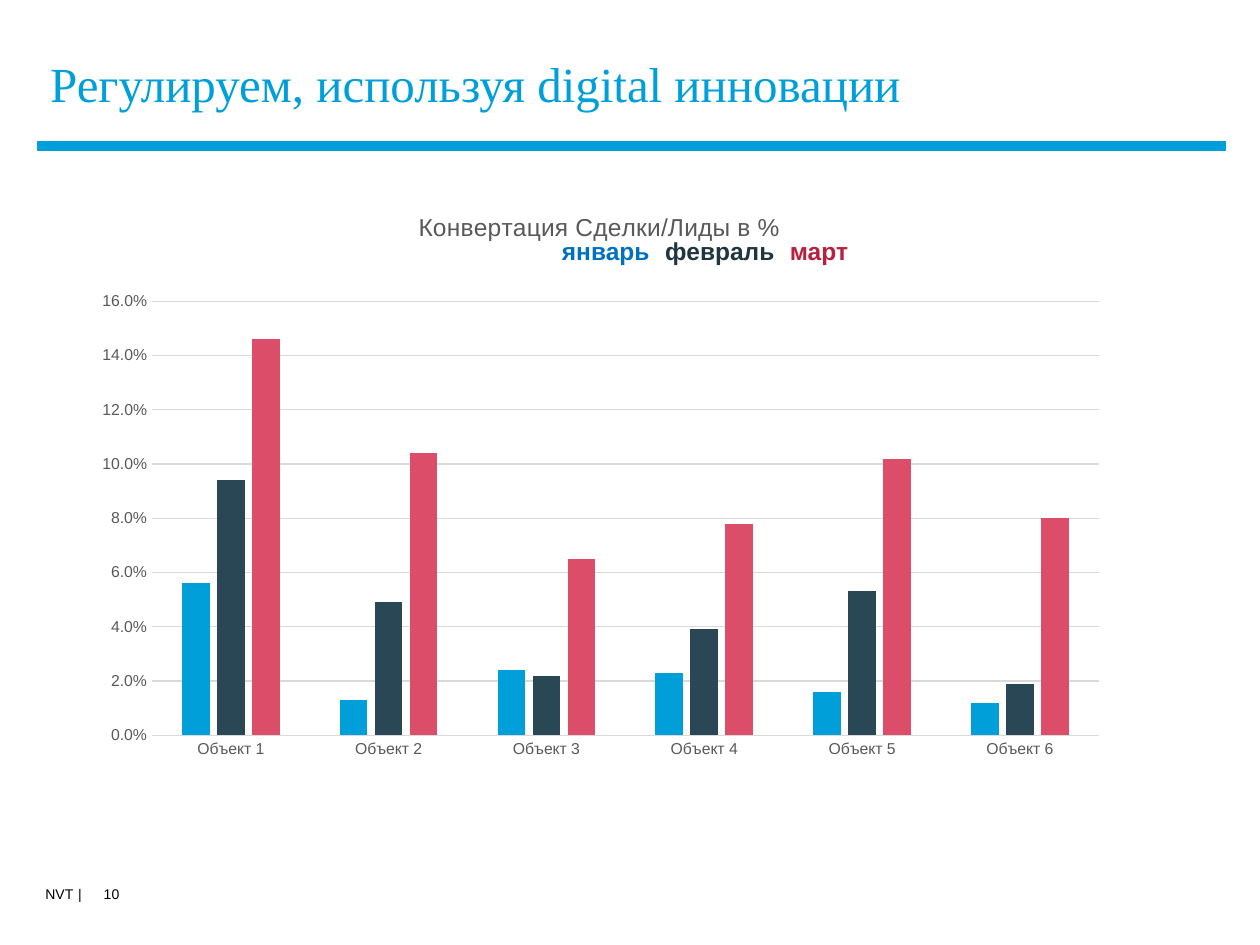
from lxml import etree
from pptx import Presentation, util as u
from pptx.chart.data import CategoryChartData
from pptx.dml.color import RGBColor
from pptx.enum import chart as ch, shapes, text
from pptx.oxml import parse_xml
from pptx.oxml.ns import nsdecls, qn

WIDE, HIGH = u.Inches(10), u.Inches(7.5)
COLS, ROWS = 200, 150  # square grid cells over the whole slide
HUES = {
    "blue": "009FDA", "slate": "294754", "rose": "DB4D69",
    "jan": "0070C0", "feb": "1F3540", "mar": "B7203F",
    "grey": "595959", "rule": "D9D9D9", "black": "000000",
}
MONTHS = [
    ("январь", "blue", "jan", (0.056, 0.013, 0.024, 0.023, 0.016, 0.012)),
    ("февраль", "slate", "feb", (0.094, 0.049, 0.022, 0.039, 0.053, 0.019)),
    ("март", "rose", "mar", (0.146, 0.104, 0.065, 0.078, 0.102, 0.08)),
]


def hue(name):
    return RGBColor.from_string(HUES[name])


def col(n):
    return round(WIDE * n / COLS)


def row(n):
    return round(HIGH * n / ROWS)


def place(x, y, w, h):
    return col(x), row(y), col(w), row(h)


def style(font, size, color, bold=False, face="Arial"):
    font.size, font.bold, font.name = u.Pt(size), bold, face
    font.color.rgb = hue(color)


def add_text(slide, box, runs, size, face="Arial", bold=False, pad=(0, 0, 0, 0),
             stops=(), align=text.PP_ALIGN.LEFT, anchor=text.MSO_ANCHOR.TOP, lead=None):
    """Add one paragraph; runs are (words, colour), pad and stops are in columns."""
    frame = slide.shapes.add_textbox(*place(*box)).text_frame
    frame.word_wrap = True
    frame.vertical_anchor = anchor
    (frame.margin_left, frame.margin_top,
     frame.margin_right, frame.margin_bottom) = map(col, pad)
    para = frame.paragraphs[0]
    para.alignment = align
    if lead:
        para.line_spacing = lead
    if stops:
        tabs = etree.SubElement(para._p.get_or_add_pPr(), qn("a:tabLst"))
        for stop in stops:
            etree.SubElement(tabs, qn("a:tab"), pos=str(col(stop)), algn="l")
    for words, color in runs:
        run = para.add_run()
        run.text = words
        style(run.font, size, color, bold, face)


def add_rule(slide, x, y, end):
    line = slide.shapes.add_connector(
        shapes.MSO_CONNECTOR.STRAIGHT, col(x), row(y), col(end), row(y))
    line.line.color.rgb = hue("blue")
    line.line.width = u.Pt(6)
    etree.SubElement(line._element.spPr, qn("a:effectLst"))


def layout(inner, **spots):
    """Build a manual chart layout from shares of the chart's size."""
    target = '<c:layoutTarget val="inner"/>' if inner else ""
    modes = "".join(f'<c:{k}Mode val="edge"/>' for k in "xy")
    vals = "".join(f'<c:{k} val="{v}"/>' for k, v in spots.items())
    return parse_xml(f'<c:layout {nsdecls("c")}><c:manualLayout>'
                     f'{target}{modes}{vals}</c:manualLayout></c:layout>')


def set_layout(node, new, after=None):
    for old in node.findall(qn("c:layout")):
        node.remove(old)
    if after is None:
        node.insert(0, new)
    else:
        after.addnext(new)


def style_axes(chart):
    for axis in (chart.category_axis, chart.value_axis):
        axis.major_tick_mark = axis.minor_tick_mark = ch.XL_TICK_MARK.NONE
        style(axis.tick_labels.font, 9, "grey")
    line = chart.category_axis.format.line
    line.color.rgb, line.width = hue("rule"), u.Pt(0.75)
    axis = chart.value_axis
    axis.minimum_scale, axis.maximum_scale, axis.major_unit = 0, 0.16, 0.02
    axis.tick_labels.number_format = "0.0%"
    axis.tick_labels.number_format_is_linked = False
    axis.format.line.fill.background()
    grid = axis.major_gridlines.format.line
    grid.color.rgb, grid.width = hue("rule"), u.Pt(0.75)


def add_bars(slide, box, title):
    data = CategoryChartData(number_format="0.0%")
    data.categories = [f"Объект {n}" for n in range(1, 7)]
    for name, _, _, vals in MONTHS:
        data.add_series(name, vals)
    chart = slide.shapes.add_chart(
        ch.XL_CHART_TYPE.COLUMN_CLUSTERED, *place(*box), data).chart
    style(chart.font, 10, "black")
    chart.has_legend = False
    chart.has_title = True
    run = chart.chart_title.text_frame.paragraphs[0].add_run()
    run.text = title
    style(run.font, 14, "grey")
    head = chart.chart_title._element
    set_layout(head, layout(False, x=0.32, y=0.02), head.find(qn("c:tx")))
    chart.chart_title.include_in_layout = False
    style_axes(chart)
    plot = chart.plots[0]
    plot.gap_width, plot.overlap, plot.vary_by_categories = 219, -27, False
    for series, (_, color, _, _) in zip(plot.series, MONTHS):
        series.format.fill.solid()
        series.format.fill.fore_color.rgb = hue(color)
        series.invert_if_negative = False
    area = chart._chartSpace.chart.plotArea
    set_layout(area, layout(True, x=0.0675, y=0.184, w=0.912, h=0.754))


def main():
    deck = Presentation()
    deck.slide_width, deck.slide_height = WIDE, HIGH
    slide = deck.slides.add_slide(deck.slide_layouts[6])
    add_rule(slide, 5.8, 23.2, 194.6)
    add_text(slide, (6, 5, 189, 17.4),
             [("Регулируем, используя digital инновации", "blue")], 28,
             face="Times New Roman", pad=(2, 1, 2, 1),
             anchor=text.MSO_ANCHOR.MIDDLE, lead=0.9)
    add_bars(slide, (13, 31, 164.8, 91.4), "Конвертация Сделки/Лиды в %")
    months = [("\t" * (n > 0) + name, ink)
              for n, (name, _, ink, _) in enumerate(MONTHS)]
    add_text(slide, (89.2, 37.4, 50, 5), months, 14, bold=True, stops=(16.4, 36.2))
    add_text(slide, (7.2, 140.6, 7, 6), [("NVT\t|", "black")], 8, stops=(5.2,))
    add_text(slide, (13, 139.6, 11, 5.6), [("10", "black")], 8,
             pad=(0, 1, 1.6, 1), align=text.PP_ALIGN.CENTER)
    deck.save("out.pptx")


if __name__ == "__main__":
    main()
